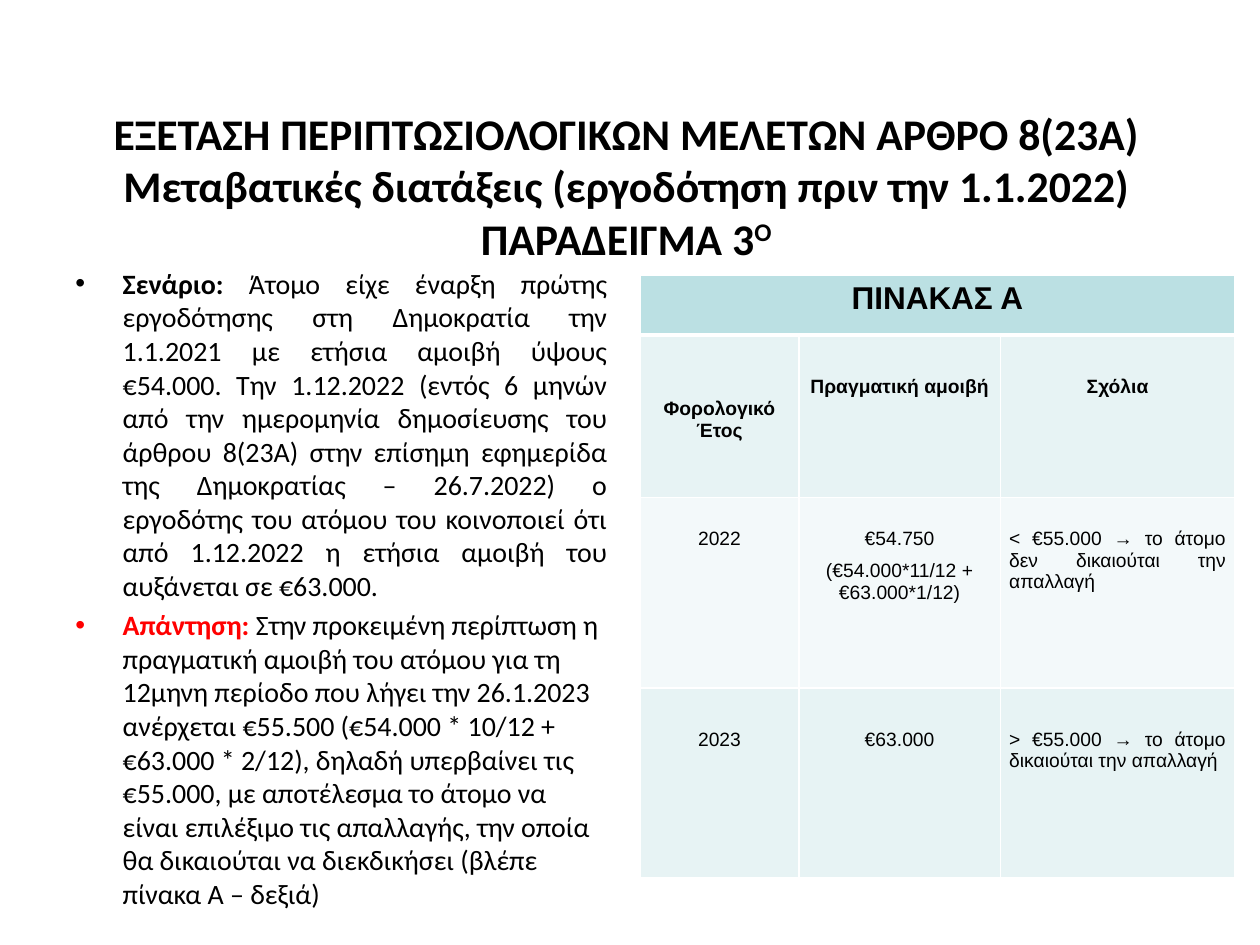
from lxml import etree
from pptx import Presentation
from pptx.dml.color import RGBColor
from pptx.enum.text import MSO_ANCHOR, MSO_AUTO_SIZE, PP_ALIGN
from pptx.oxml.ns import qn
from pptx.util import Pt

BLACK = RGBColor(0x00, 0x00, 0x00)
RED = RGBColor(0xFF, 0x00, 0x00)
TEAL = RGBColor(0xBB, 0xE0, 0xE3)
LIGHT = RGBColor(0xE7, 0xF3, 0xF4)
PALE = RGBColor(0xF3, 0xF9, 0xFA)

TOP, MIDDLE = MSO_ANCHOR.TOP, MSO_ANCHOR.MIDDLE
CENTER, LEFT, JUSTIFY = PP_ALIGN.CENTER, PP_ALIGN.LEFT, PP_ALIGN.JUSTIFY
FIXED = MSO_AUTO_SIZE.NONE

TITLE = (
    "ΕΞΕΤΑΣΗ ΠΕΡΙΠΤΩΣΙΟΛΟΓΙΚΩΝ ΜΕΛΕΤΩΝ ΑΡΘΡΟ 8(23Α)\v"
    "Μεταβατικές διατάξεις (εργοδότηση πριν την 1.1.2022)\v"
    "ΠΑΡΑΔΕΙΓΜΑ 3"
)
# Label, label colour, alignment, text
POINTS = [
    ("Σενάριο: ", BLACK, JUSTIFY,
     "Άτομο είχε έναρξη πρώτης εργοδότησης στη Δημοκρατία την 1.1.2021 με "
     "ετήσια αμοιβή ύψους €54.000. Την 1.12.2022 (εντός 6 μηνών από την "
     "ημερομηνία δημοσίευσης του άρθρου 8(23Α) στην επίσημη εφημερίδα της "
     "Δημοκρατίας – 26.7.2022) ο εργοδότης του ατόμου του κοινοποιεί ότι από "
     "1.12.2022 η ετήσια αμοιβή του αυξάνεται σε €63.000."),
    ("Απάντηση: ", RED, LEFT,
     "Στην προκειμένη περίπτωση η πραγματική αμοιβή του ατόμου για τη 12μηνη "
     "περίοδο που λήγει την 26.1.2023 ανέρχεται €55.500 (€54.000 * 10/12 + "
     "€63.000 * 2/12), δηλαδή υπερβαίνει τις €55.000, με αποτέλεσμα το άτομο "
     "να είναι επιλέξιμο τις απαλλαγής, την οποία θα δικαιούται να "
     "διεκδικήσει (βλέπε πίνακα Α – δεξιά)"),
]
HEAD = ["Φορολογικό Έτος", "Πραγματική αμοιβή", "Σχόλια"]
# Fill, top margin, cell texts
ROWS = [
    (LIGHT, 23.5, HEAD),
    (PALE, 17.5, ["2022", "€54.750\n(€54.000*11/12 + €63.000*1/12)",
                  "< €55.000 → το άτομο δεν δικαιούται την απαλλαγή"]),
    (LIGHT, 23.5, ["2023", "€63.000",
                   "> €55.000 → το άτομο δικαιούται την απαλλαγή"]),
]
COLS = [90.7, 115.2, 133.9]
HEIGHTS = [34.5, 92.9, 108.7, 108.7]


def set_font(font, name, size, bold=None):
    font.name, font.size, font.bold = name, Pt(size), bold
    font.color.rgb = BLACK


def add_title(slide):
    title = slide.shapes.title
    title.left, title.top = Pt(33.8), Pt(44.6)
    title.width, title.height = Pt(648), Pt(90)
    frame = title.text_frame
    frame.auto_size, frame.word_wrap = FIXED, True
    frame.vertical_anchor = MIDDLE
    frame.margin_top = Pt(36)
    frame.text = TITLE
    para = frame.paragraphs[0]
    para.alignment = CENTER
    mark = para.add_run()
    mark.text = "Ο"
    mark._r.get_or_add_rPr().set("baseline", "30000")
    set_font(para.font, "Calibri", 25, True)


def add_bullet(para, color):
    props = para._p.get_or_add_pPr()
    props.set("marL", str(Pt(27)))
    props.set("indent", str(Pt(-27)))
    tint = etree.SubElement(props, qn("a:buClr"))
    etree.SubElement(tint, qn("a:srgbClr"), val=str(color))
    etree.SubElement(props, qn("a:buFont"), typeface="Arial")
    etree.SubElement(props, qn("a:buChar"), char="•")


def add_points(slide):
    box = slide.shapes.add_textbox(Pt(36), Pt(145.4), Pt(318.2), Pt(356.4))
    frame = box.text_frame
    frame.word_wrap, frame.auto_size = True, FIXED
    frame.margin_top = Pt(6.8)
    for i, (label, color, align, text) in enumerate(POINTS):
        para = frame.add_paragraph() if i else frame.paragraphs[0]
        add_bullet(para, color)
        para.alignment = align
        if i:
            para.space_before = Pt(3.2)
        set_font(para.font, "Calibri", 16)
        lead = para.add_run()
        lead.text = label
        lead.font.bold, lead.font.color.rgb = True, color
        para.add_run().text = text


def set_borders(cell, base):
    props = cell._tc.get_or_add_tcPr()
    for side, width in (("L", 1), ("R", 1), ("T", 1), ("B", base)):
        line = etree.SubElement(props, qn("a:ln" + side), w=str(Pt(width)))
        fill = etree.SubElement(line, qn("a:solidFill"))
        etree.SubElement(fill, qn("a:srgbClr"), val="FFFFFF")


def fill_cell(cell, text, fill, size, bold, align=CENTER):
    cell.fill.solid()
    cell.fill.fore_color.rgb = fill
    cell.text = text
    for i, para in enumerate(cell.text_frame.paragraphs):
        para.alignment = align
        if i:
            para.space_before = Pt(6)
        set_font(para.font, "Arial", size, bold)


def add_grid(slide):
    frame = slide.shapes.add_table(len(HEIGHTS), len(COLS), Pt(365.8), Pt(157),
                                   Pt(sum(COLS)), Pt(sum(HEIGHTS)))
    table = frame.table
    for col, width in zip(table.columns, COLS):
        col.width = Pt(width)
    for row, height in zip(table.rows, HEIGHTS):
        row.height = Pt(height)

    # Heading across all columns
    for cell in table.rows[0].cells:
        set_borders(cell, 3)
    top = table.cell(0, 0)
    top.merge(table.cell(0, len(COLS) - 1))
    fill_cell(top, "ΠΙΝΑΚΑΣ Α", TEAL, 18, True)

    # Column heads and years
    for r, (fill, margin, texts) in enumerate(ROWS, 1):
        for c, text in enumerate(texts):
            cell = table.cell(r, c)
            set_borders(cell, 1)
            cell.margin_left = cell.margin_right = Pt(5)
            cell.margin_top, cell.margin_bottom = Pt(margin), Pt(0)
            cell.vertical_anchor = TOP
            align = JUSTIFY if r > 1 and c == 2 else CENTER
            fill_cell(cell, text, fill, 11, r == 1, align)
    year = table.cell(1, 0)
    year.vertical_anchor, year.margin_top = MIDDLE, Pt(4)


def main():
    deck = Presentation()
    deck.slide_width, deck.slide_height = Pt(720), Pt(540)
    slide = deck.slides.add_slide(deck.slide_layouts[5])
    add_title(slide)
    add_points(slide)
    add_grid(slide)
    deck.save("out.pptx")


if __name__ == "__main__":
    main()
